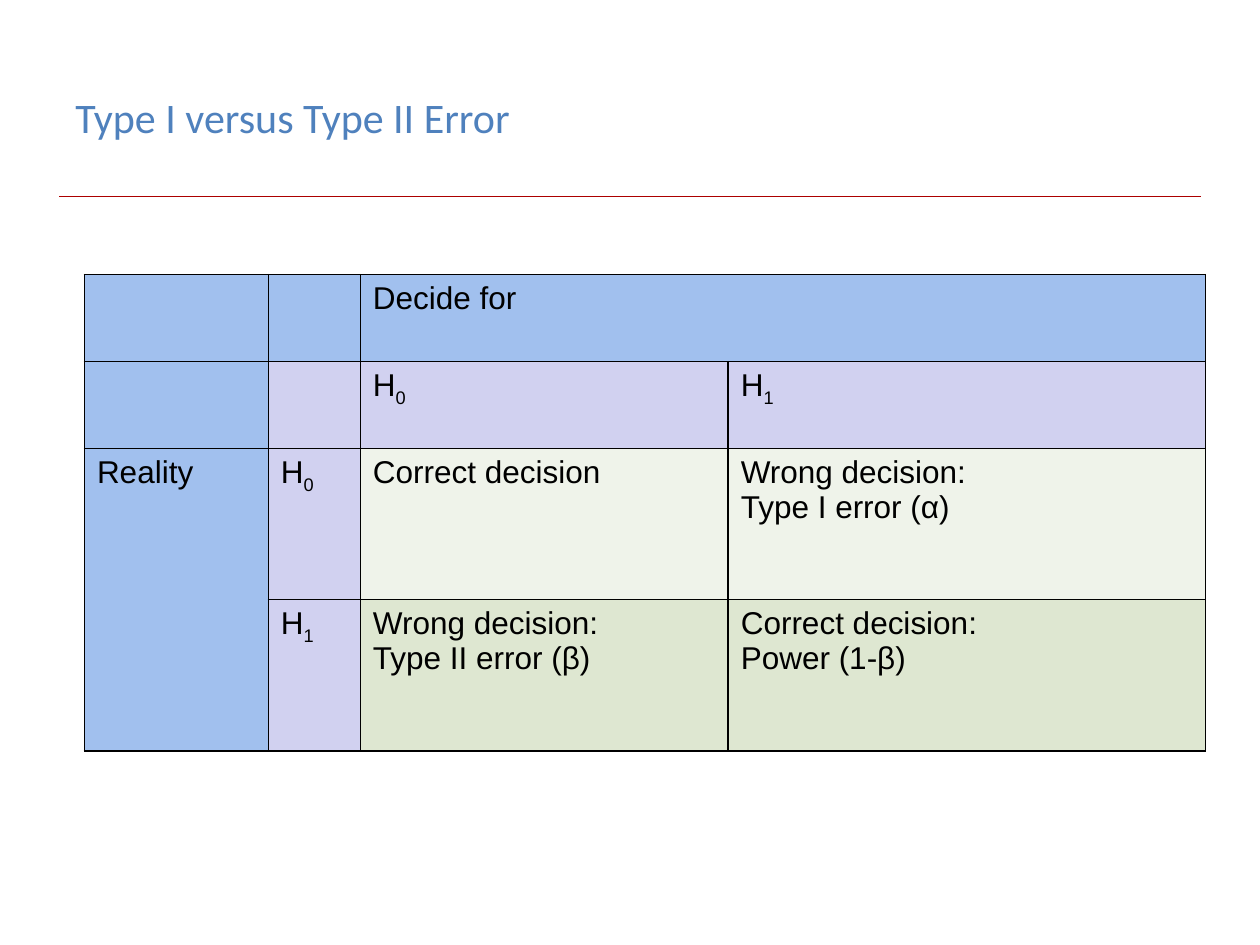
from lxml.etree import SubElement
from pptx import Presentation
from pptx.dml.color import RGBColor
from pptx.enum.shapes import MSO_CONNECTOR
from pptx.enum.text import MSO_ANCHOR
from pptx.oxml.ns import qn
from pptx.util import Inches, Pt

COLORS = {
    "title": "4F81BD", "rule": "AC0000", "text": "000000", "border": "000000",
    "header": "A1C0EE", "hypothesis": "D1D1F0",
    "h0_row": "EFF3EA", "h1_row": "DEE7D1",
}


class SlideBuilder:
    def __init__(self, slide):
        self.slide = slide

    def style(self, paragraph, font_name, size, color):
        font = paragraph.font
        font.name, font.size = font_name, Pt(size)
        font.color.rgb = RGBColor.from_string(COLORS[color])

    def title(self, text, left, top, width, height):
        box = self.slide.shapes.add_textbox(
            Inches(left), Inches(top), Inches(width), Inches(height))
        frame = box.text_frame
        frame.word_wrap = True
        frame.vertical_anchor = MSO_ANCHOR.MIDDLE
        frame.text = text
        self.style(frame.paragraphs[0], "Calibri", 24, "title")

    def rule(self, left, right, y):
        line = self.slide.shapes.add_connector(
            MSO_CONNECTOR.STRAIGHT, Inches(left), Inches(y), Inches(right), Inches(y))
        line.line.color.rgb = RGBColor.from_string(COLORS["rule"])
        line.line.width = Pt(0.25)
        SubElement(line._element.spPr, qn("a:effectLst"))

    def borders(self, cell):
        properties = cell._tc.get_or_add_tcPr()
        for side in ("a:lnL", "a:lnR", "a:lnT", "a:lnB"):
            edge = SubElement(properties, qn(side), w=str(Pt(1)))
            fill = SubElement(edge, qn("a:solidFill"))
            SubElement(fill, qn("a:srgbClr"), val=COLORS["border"])

    def cell(self, cell, text, fill):
        """Fill one cell; an underscore starts a subscript."""
        self.borders(cell)
        cell.fill.solid()
        cell.fill.fore_color.rgb = RGBColor.from_string(COLORS[fill])
        frame = cell.text_frame
        for index, line in enumerate(text.split("\n")):
            paragraph = frame.add_paragraph() if index else frame.paragraphs[0]
            self.style(paragraph, "Arial", 18, "text")
            base, _, subscript = line.partition("_")
            if base:
                paragraph.add_run().text = base
            if subscript:
                run = paragraph.add_run()
                run.text = subscript
                run.font._element.set("baseline", "-25000")

    def table(self, left, top, widths, heights, rows, merges):
        table = self.slide.shapes.add_table(
            len(heights), len(widths), Inches(left), Inches(top),
            Inches(sum(widths)), Inches(sum(heights))).table
        for column, width in zip(table.columns, widths):
            column.width = Inches(width)
        for row, height in zip(table.rows, heights):
            row.height = Inches(height)
        for r, row in enumerate(rows):
            for c, (text, fill) in enumerate(row):
                self.cell(table.cell(r, c), text, fill)
        for first, last in merges:
            table.cell(*first).merge(table.cell(*last))


def main():
    prs = Presentation()
    prs.slide_width, prs.slide_height = Inches(10), Inches(7.5)
    builder = SlideBuilder(prs.slides.add_slide(prs.slide_layouts[6]))

    # Heading
    builder.rule(0.47, 9.53, 1.56)
    builder.title("Type I versus Type II Error", 0.5, 0.3, 6.77, 1.25)

    # Decision against reality
    blank = ("", "header")
    h0, h1 = ("H_0", "hypothesis"), ("H_1", "hypothesis")
    decisions = [
        [blank, blank, ("Decide for", "header"), blank],
        [blank, ("", "hypothesis"), h0, h1],
        [("Reality", "header"), h0, ("Correct decision", "h0_row"),
         ("Wrong decision:\nType I error (α)", "h0_row")],
        [blank, h1, ("Wrong decision:\nType II error (β)", "h1_row"),
         ("Correct decision:\nPower (1-β)", "h1_row")],
    ]
    builder.table(0.67, 2.18, [1.46, 0.73, 2.92, 3.79], [0.69, 0.69, 1.2, 1.2],
                  decisions, merges=[((0, 2), (0, 3)), ((2, 0), (3, 0))])

    prs.save("out.pptx")


if __name__ == "__main__":
    main()
